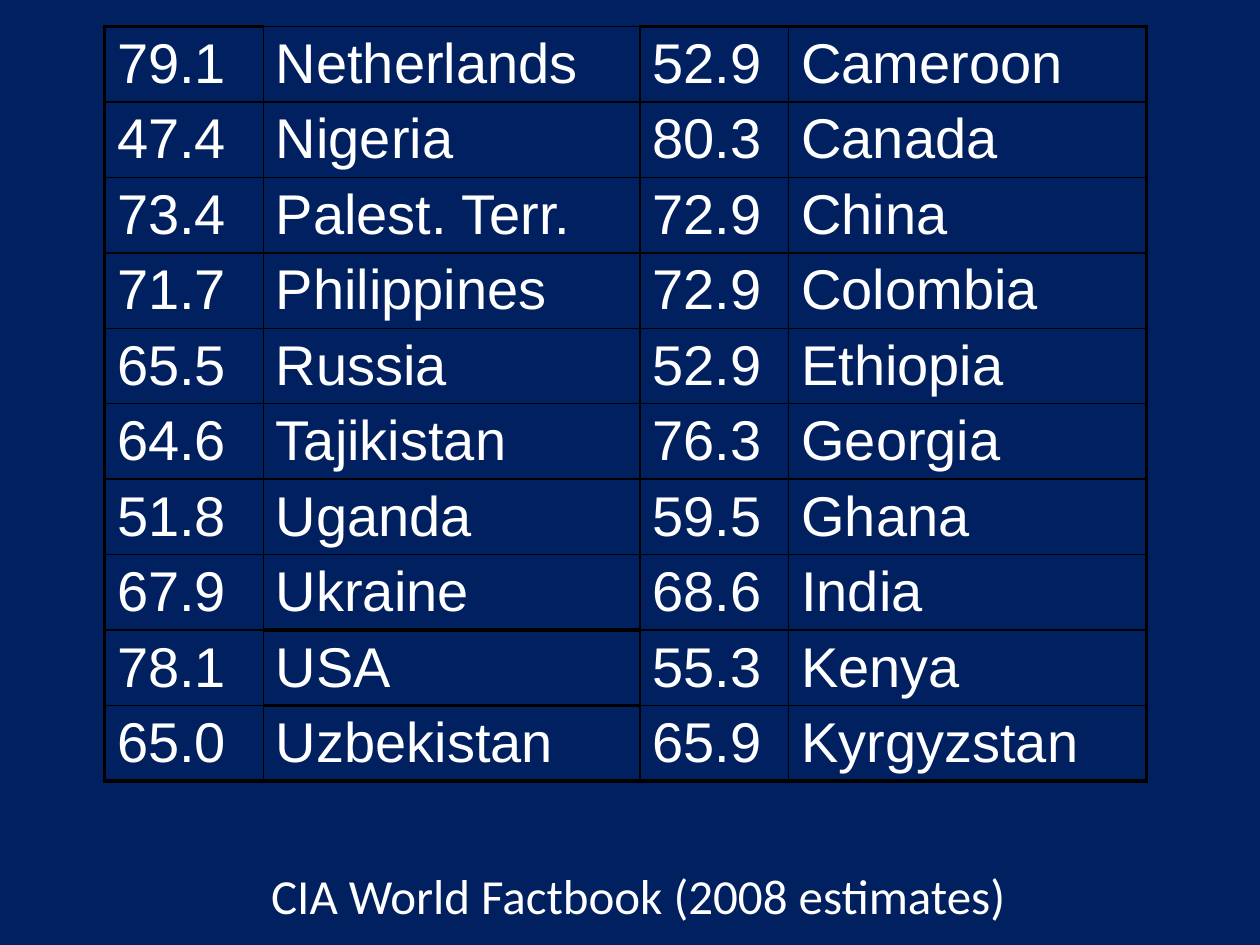
from typing import NamedTuple

from lxml.etree import SubElement
from pptx import Presentation
from pptx.dml.color import RGBColor
from pptx.enum.text import PP_ALIGN
from pptx.oxml.ns import qn
from pptx.util import Inches, Pt

NAVY, WHITE, BLACK = "002060", "FFFFFF", "000000"
THIN, THICK = 1, 2.25
COL_WIDTHS = (1.26, 2.99, 1.18, 2.84)
ROW_HEIGHT = 0.59


class Entry(NamedTuple):
    years: str
    country: str


LEFT_ENTRIES = [
    Entry("79.1", "Netherlands"), Entry("47.4", "Nigeria"),
    Entry("73.4", "Palest. Terr."), Entry("71.7", "Philippines"),
    Entry("65.5", "Russia"), Entry("64.6", "Tajikistan"),
    Entry("51.8", "Uganda"), Entry("67.9", "Ukraine"),
    Entry("78.1", "USA"), Entry("65.0", "Uzbekistan"),
]
RIGHT_ENTRIES = [
    Entry("52.9", "Cameroon"), Entry("80.3", "Canada"),
    Entry("72.9", "China"), Entry("72.9", "Colombia"),
    Entry("52.9", "Ethiopia"), Entry("76.3", "Georgia"),
    Entry("59.5", "Ghana"), Entry("68.6", "India"),
    Entry("55.3", "Kenya"), Entry("65.9", "Kyrgyzstan"),
]
ROWS = [left + right for left, right in zip(LEFT_ENTRIES, RIGHT_ENTRIES)]
LAST_ROW, LAST_COL = len(ROWS) - 1, len(COL_WIDTHS) - 1
USA_ROW = [entry.country for entry in LEFT_ENTRIES].index("USA")


def color(value: str) -> RGBColor:
    return RGBColor.from_string(value)


def style(p, font: str, size: float) -> None:
    p.font.name, p.font.size = font, Pt(size)
    p.font.color.rgb = color(WHITE)


def border_widths(row: int, col: int) -> dict[str, float]:
    """Thick outer frame, plus thick rules above and below the USA cell."""
    in_country_col = col == 1
    thick = {
        "a:lnL": col == 0,
        "a:lnR": col == LAST_COL,
        "a:lnT": (row == 0 and not in_country_col)
                 or (in_country_col and row in (USA_ROW, USA_ROW + 1)),
        "a:lnB": row == LAST_ROW
                 or (in_country_col and row in (USA_ROW - 1, USA_ROW)),
    }
    return {side: THICK if is_thick else THIN for side, is_thick in thick.items()}


def set_borders(cell, widths: dict[str, float]) -> None:
    tc_pr = cell._tc.get_or_add_tcPr()
    for side, width in widths.items():
        ln = SubElement(tc_pr, qn(side), w=str(Pt(width)))
        SubElement(SubElement(ln, qn("a:solidFill")), qn("a:srgbClr"), val=BLACK)


def add_life_table(s) -> None:
    frame = s.shapes.add_table(
        len(ROWS), len(COL_WIDTHS), Inches(0.83), Inches(0.21),
        Inches(sum(COL_WIDTHS)), Inches(ROW_HEIGHT * len(ROWS)))
    table = frame.table
    table.first_row = table.horz_banding = False
    for column, width in zip(table.columns, COL_WIDTHS):
        column.width = Inches(width)
    for i, values in enumerate(ROWS):
        table.rows[i].height = Inches(ROW_HEIGHT)
        for j, value in enumerate(values):
            cell = table.cell(i, j)
            cell.text = value
            style(cell.text_frame.paragraphs[0], "Arial", 32)
            set_borders(cell, border_widths(i, j))
            cell.fill.background()


def add_caption(s, text: str) -> None:
    tf = s.shapes.add_textbox(
        Inches(1.01), Inches(6.82), Inches(8.11), Inches(0.57)).text_frame
    tf.word_wrap = True
    p = tf.paragraphs[0]
    p.text, p.alignment = text, PP_ALIGN.CENTER
    style(p, "Calibri", 28)


def main() -> None:
    prs = Presentation()
    prs.slide_width, prs.slide_height = Inches(10), Inches(7.5)
    s = prs.slides.add_slide(prs.slide_layouts[6])
    s.background.fill.solid()
    s.background.fill.fore_color.rgb = color(NAVY)
    add_life_table(s)
    add_caption(s, "CIA World Factbook (2008 estimates)")
    prs.save("out.pptx")


if __name__ == "__main__":
    main()
